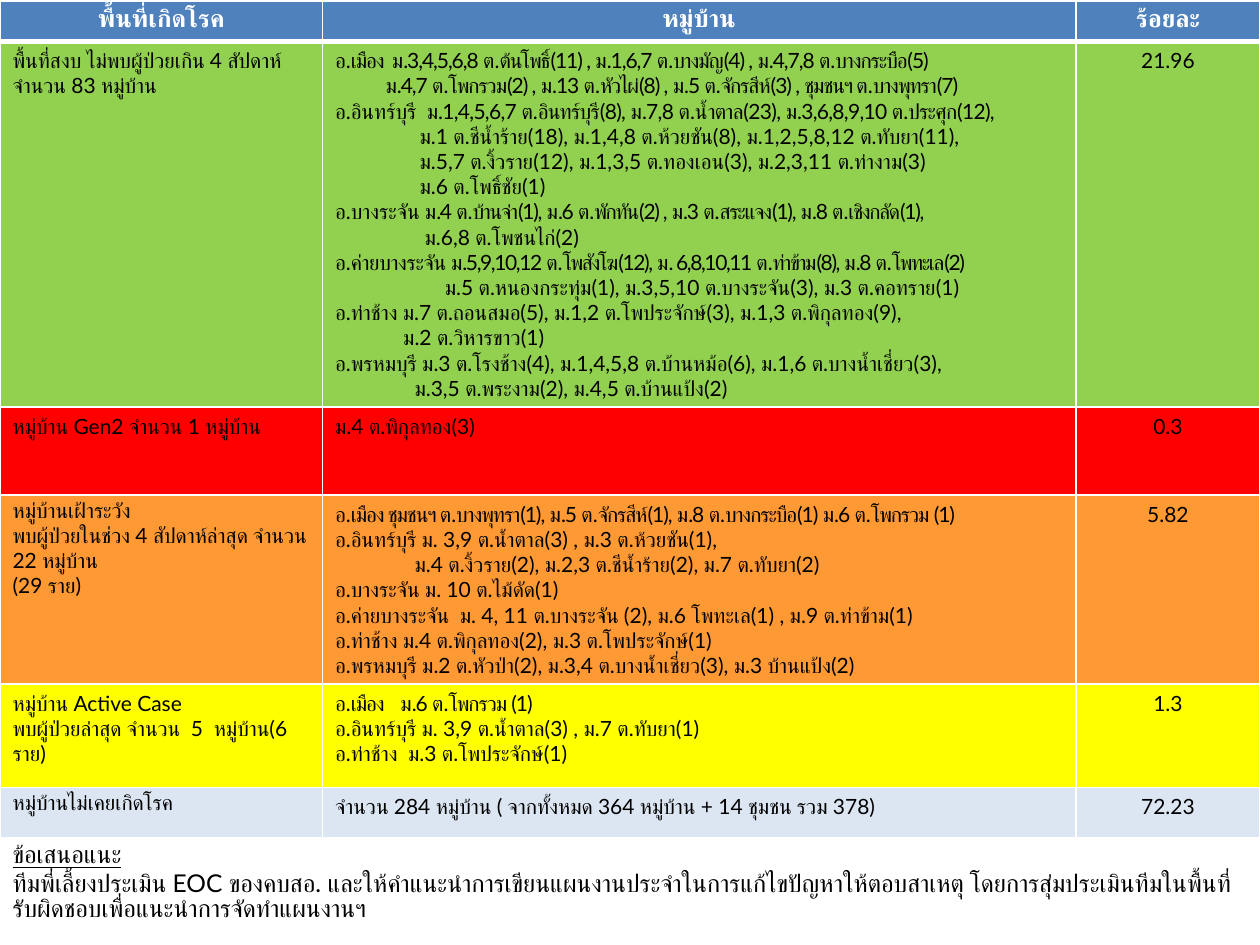
from lxml.etree import SubElement
from pptx import Presentation
from pptx.dml.color import RGBColor
from pptx.enum.text import PP_ALIGN
from pptx.oxml import parse_xml
from pptx.oxml.ns import nsdecls
from pptx.util import Inches, Pt

WIDTH, HEIGHT = 10, 7.5
COLUMNS = [2.56, 5.98, 1.46]
ROWS = [0.32, 2.89, 0.7, 1.5, 0.82, 0.4, 0.83]
FONT = "Lato"
HEADER = {"size": Pt(14), "bold": True, "name": FONT}
BODY = {"size": Pt(12), "bold": False, "name": FONT}
NOTE = {"size": Pt(14), "bold": False, "name": FONT}
HEADINGS = ["พื้นที่เกิดโรค", "หมู่บ้าน", "ร้อยละ"]

# Each line is (indent in inches, (text, letter spacing in points), ...).
QUIET = [
    (0, ("อ.เมือง  ม.3,4,5,6,8 ต.ต้นโพธิ์(11) , ม.1,6,7 ต.บางมัญ(4) , ม.4,7,8 ต.บางกระบือ(5)", -0.6)),
    (0.4, ("ม.4,7 ต.โพกรวม(2) , ม.13 ต.หัวไผ่(8) , ม.5 ต.จักรสีห์(3) , ชุมชนฯ ต.บางพุทรา(7)", -0.6)),
    (0, ("อ.อินทร์บุรี  ", 0),
     ("ม.1,4,5,6,7 ต.อินทร์บุรี(8), ม.7,8 ต.น้ำตาล(23), ม.3,6,8,9,10 ต.ประศุก(12),", -0.4)),
    (0.67, ("ม.1 ต.ชีน้ำร้าย(18), ม.1,4,8 ต.ห้วยชัน(8), ม.1,2,5,8,12 ต.ทับยา(11),", 0)),
    (0.67, ("ม.5,7 ต.งิ้วราย(12), ม.1,3,5 ต.ทองเอน(3), ม.2,3,11 ต.ท่างาม(3)", 0)),
    (0.67, ("ม.6 ต.โพธิ์ชัย(1)", 0)),
    (0, ("อ.บางระจัน ", 0),
     ("ม.4 ต.บ้านจ่า(1), ม.6 ต.พักทัน(2) , ม.3 ต.สระแจง(1), ม.8 ต.เชิงกลัด(1),", -0.7)),
    (0.71, ("ม.6,8 ต.โพชนไก่(2)", 0)),
    (0, ("อ.", 0), ("ค่ายบางระจัน ", -0.2),
     ("ม.5,9,10,12 ต.โพสังโฆ(12), ม. 6,8,10,11 ต.ท่าข้าม(8), ม.8 ต.โพทะเล(2)", -0.8)),
    (0.87, ("ม.5 ต.หนองกระทุ่ม(1), ม.3,5,10 ต.บางระจัน(3), ม.3 ต.คอทราย(1)", 0)),
    (0, ("อ.ท่าช้าง ม.7 ต.ถอนสมอ(5), ม.1,2 ต.โพประจักษ์(3), ม.1,3 ต.พิกุลทอง(9),", 0)),
    (0.54, ("ม.2 ต.วิหารขาว(1)", 0)),
    (0, ("อ.พรหมบุรี ม.3 ต.โรงช้าง(4), ม.1,4,5,8 ต.บ้านหม้อ(6), ม.1,6 ต.บางน้ำเชี่ยว(3),", 0)),
    (0.63, ("ม.3,5 ต.พระงาม(2), ม.4,5 ต.บ้านแป้ง(2)", 0)),
]
WATCHED = [
    (0, ("อ.เมือง ชุมชนฯ ต.บางพุทรา(1), ม.5 ต.จักรสีห์(1), ม.8 ต.บางกระบือ(1) ม.6 ต.โพกรวม (1)", -0.6)),
    (0, ("อ.อินทร์บุรี ม. 3,9 ต.น้ำตาล(3) , ม.3 ต.ห้วยชัน(1),", 0)),
    (0.63, ("ม.4 ต.งิ้วราย(2), ม.2,3 ต.ชีน้ำร้าย(2), ม.7 ต.ทับยา(2)", 0)),
    (0, ("อ.บางระจัน ม. 10 ต.ไม้ดัด(1)", 0)),
    (0, ("อ.ค่ายบางระจัน  ม. 4, 11 ต.บางระจัน (2), ม.6 โพทะเล(1) , ม.9 ต.ท่าข้าม(1)", 0)),
    (0, ("อ.ท่าช้าง ม.4 ต.พิกุลทอง(2), ม.3 ต.โพประจักษ์(1)", 0)),
    (0, ("อ.พรหมบุรี ม.2 ต.หัวป่า(2), ม.3,4 ต.บางน้ำเชี่ยว(3), ม.3 บ้านแป้ง(2)", 0)),
]
ACTIVE = [
    (0, ("อ.เมือง    ม.6 ต.โพกรวม (1)", -0.6)),
    (0, ("อ.อินทร์บุรี ม. 3,9 ต.น้ำตาล(3) , ม.7 ต.ทับยา(1)", 0)),
    (0, ("อ.ท่าช้าง  ม.3 ต.โพประจักษ์(1)", 0)),
]
AREAS = [
    ("92D050", ["พื้นที่สงบ ไม่พบผู้ป่วยเกิน 4 สัปดาห์ จำนวน 83 หมู่บ้าน"], QUIET, "21.96"),
    ("FF0000", ["หมู่บ้าน Gen2 จำนวน 1 หมู่บ้าน"], ["ม.4 ต.พิกุลทอง(3)"], "0.3"),
    ("FF9933", ["หมู่บ้านเฝ้าระวัง", "พบผู้ป่วยในช่วง 4 สัปดาห์ล่าสุด จำนวน 22 หมู่บ้าน", "(29 ราย)"],
     WATCHED, "5.82"),
    ("FFFF00", ["หมู่บ้าน Active Case", "พบผู้ป่วยล่าสุด จำนวน  5  หมู่บ้าน(6 ราย)"], ACTIVE, "1.3"),
    ("DCE6F2", ["หมู่บ้านไม่เคยเกิดโรค"],
     ["จำนวน 284 หมู่บ้าน ( จากทั้งหมด 364 หมู่บ้าน + 14 ชุมชน รวม 378)"], "72.23"),
]
ADVICE = [
    "ข้อเสนอแนะ",
    "ทีมพี่เลี้ยงประเมิน EOC ของคบสอ. และให้คำแนะนำการเขียนแผนงานประจำในการแก้ไขปัญหาให้ตอบสาเหตุ "
    "โดยการสุ่มประเมินทีมในพื้นที่รับผิดชอบเพื่อแนะนำการจัดทำแผนงานฯ",
]


def rgb(value):
    """Turn a hex string into a colour."""
    return RGBColor.from_string(value)


def set_borders(cell, top=1, bottom=1):
    """Draw white lines around a cell, with widths in points."""
    tcPr = cell._tc.get_or_add_tcPr()
    for i, (side, width) in enumerate(zip("LRTB", (1, 1, top, bottom))):
        ln = parse_xml(f'<a:ln{side} {nsdecls("a")} w="{Pt(width)}"><a:solidFill>'
                       f'<a:srgbClr val="FFFFFF"/></a:solidFill></a:ln{side}>')
        tcPr.insert(i, ln)


def fill_cell(cell, lines, fill, style, color="000000", align=PP_ALIGN.LEFT, **borders):
    """Write lines into a cell and set its fill and borders."""
    cell.fill.solid()
    cell.fill.fore_color.rgb = rgb(fill)
    set_borders(cell, **borders)
    tf = cell.text_frame
    for i, line in enumerate(lines):
        indent, *runs = (0, (line, 0)) if isinstance(line, str) else line
        p = tf.add_paragraph() if i else tf.paragraphs[0]
        p.alignment = align
        if indent:
            p._p.get_or_add_pPr().set("marL", str(Inches(indent)))
        for text, spacing in runs:
            r = p.add_run()
            r.text = text
            for name, value in style.items():
                setattr(r.font, name, value)
            r.font.color.rgb = rgb(color)
            if spacing:
                r._r.get_or_add_rPr().set("spc", str(round(spacing * 100)))


def add_area_table(s, left, top, width, height):
    """Place the table of disease areas with its closing advice row."""
    tbl = s.shapes.add_table(len(ROWS), len(COLUMNS), left, top, width, height).table
    for column, share in zip(tbl.columns, COLUMNS):
        column.width = int(width * share / sum(COLUMNS))
    for row, share in zip(tbl.rows, ROWS):
        row.height = int(height * share / sum(ROWS))
    for c, heading in enumerate(HEADINGS):
        fill_cell(tbl.cell(0, c), [heading], "4F81BD", HEADER, "FFFFFF", PP_ALIGN.CENTER, bottom=3)
    for i, (fill, area, villages, percent) in enumerate(AREAS, 1):
        top_line = 3 if i == 1 else 1
        fill_cell(tbl.cell(i, 0), area, fill, BODY, top=top_line)
        fill_cell(tbl.cell(i, 1), villages, fill, BODY, top=top_line)
        fill_cell(tbl.cell(i, 2), [percent], fill, BODY, align=PP_ALIGN.CENTER, top=top_line)
    last = len(ROWS) - 1
    advice = tbl.cell(last, 0)
    advice.merge(tbl.cell(last, len(COLUMNS) - 1))
    fill_cell(advice, ADVICE, "FFFFFF", NOTE)
    advice.text_frame.paragraphs[0].runs[0].font.underline = True


def main():
    """Build the slide and save it."""
    prs = Presentation()
    prs.slide_width, prs.slide_height = Inches(WIDTH), Inches(HEIGHT)
    s = prs.slides.add_slide(prs.slide_layouts[6])
    add_area_table(s, 0, Inches(0.01), prs.slide_width, Inches(sum(ROWS)))
    prs.save("out.pptx")


if __name__ == "__main__":
    main()
